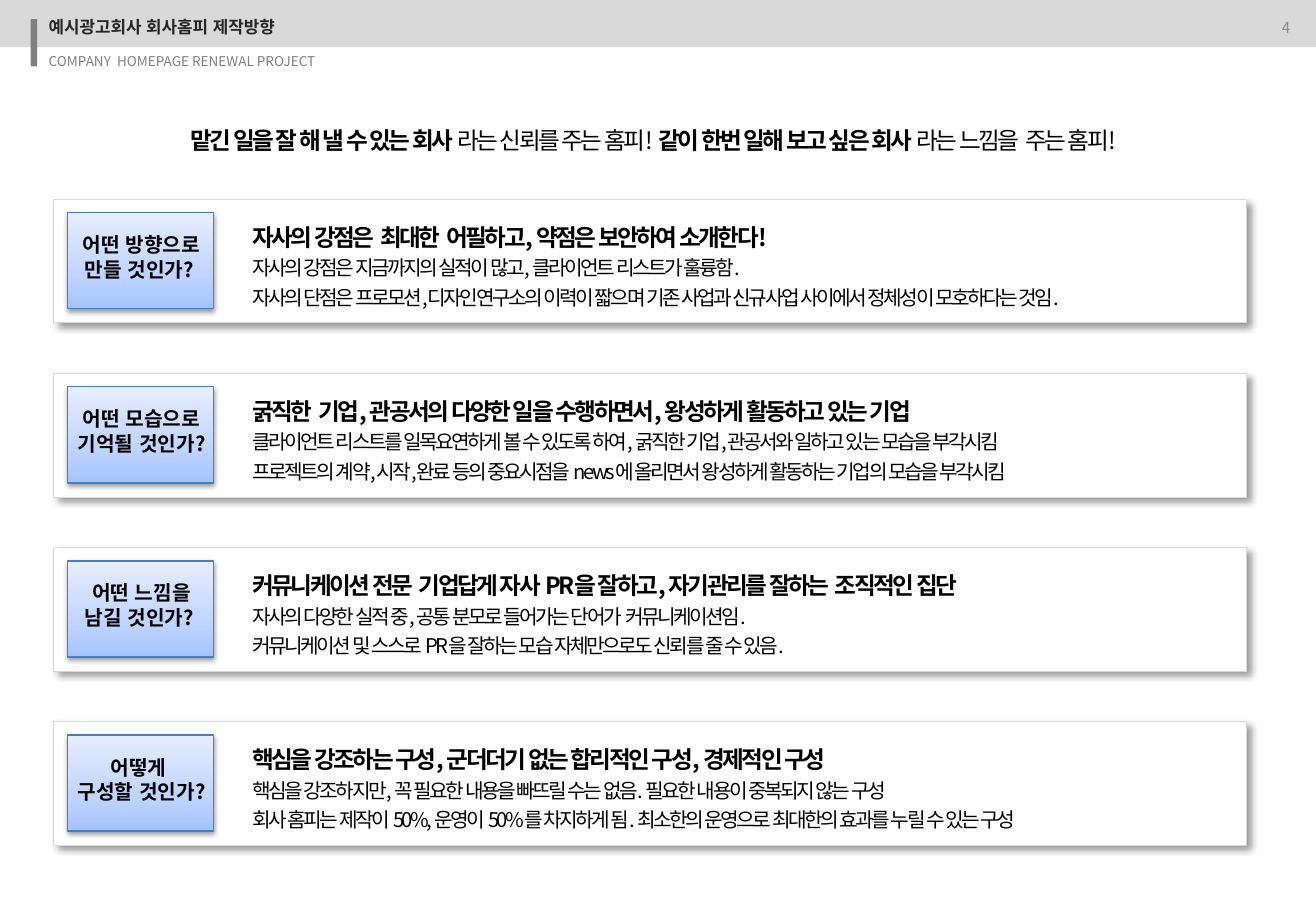
from dataclasses import dataclass

from pptx import Presentation
from pptx.dml.color import RGBColor
from pptx.enum.lang import MSO_LANGUAGE_ID
from pptx.enum.shapes import MSO_SHAPE
from pptx.enum.text import MSO_ANCHOR, MSO_AUTO_SIZE, PP_ALIGN
from pptx.oxml import parse_xml
from pptx.oxml.ns import nsdecls, qn
from pptx.util import Cm, Pt


@dataclass(frozen=True)
class Theme:
    """Colours, font and type sizes of the deck."""
    font: str = "Noto Sans CJK KR"
    band: str = "D9D9D9"
    marker: str = "808080"
    number: str = "8C8C8C"
    title: str = "262626"
    ink: str = "000000"
    paper: str = "FFFFFF"
    badge_line: str = "4B7EBC"
    badge_stops: tuple = ((0, "A4C4FF"), (35, "BFD4FF"), (100, "E6EEFF"))
    tiny: int = 8
    small: int = 9
    caption: int = 10
    normal: int = 12
    lead: int = 14


THEME = Theme()
FIRST_CARD_TOP = 4.16
CARD_PITCH = 3.64

CARDS = (
    (("어떤 방향으로", "만들 것인가? "),
     ("자사의 강점은  최대한  어필하고, 약점은 보안하여 소개한다!",
      "자사의 강점은 지금까지의 실적이 많고, 클라이언트 리스트가 훌륭함.",
      "자사의 단점은 프로모션,디자인연구소의 이력이 짧으며 기존 사업과 신규사업 사이에서 정체성이 모호하다는 것임.")),
    (("어떤 모습으로", "기억될 것인가? "),
     ("굵직한  기업, 관공서의 다양한 일을 수행하면서, 왕성하게 활동하고 있는 기업",
      "클라이언트 리스트를 일목요연하게 볼 수 있도록 하여, 굵직한 기업,관공서와 일하고 있는 모습을 부각시킴",
      "프로젝트의 계약,시작,완료 등의 중요시점을 news에 올리면서 왕성하게 활동하는 기업의 모습을 부각시킴")),
    (("어떤 느낌을", "남길 것인가? "),
     ("커뮤니케이션 전문  기업답게 자사 PR을 잘하고, 자기관리를 잘하는  조직적인 집단",
      "자사의 다양한 실적 중, 공통 분모로 들어가는 단어가  커뮤니케이션임.",
      "커뮤니케이션 및 스스로 PR을 잘하는 모습 자체만으로도 신뢰를 줄 수 있음.")),
    (("어떻게 ", "구성할 것인가?"),
     ("핵심을 강조하는 구성, 군더더기 없는 합리적인 구성, 경제적인 구성",
      "핵심을 강조하지만, 꼭 필요한 내용을 빠뜨릴 수는 없음. 필요한 내용이 중복되지 않는 구성",
      "회사 홈피는 제작이 50%, 운영이 50%를 차지하게 됨. 최소한의 운영으로 최대한의 효과를 누릴 수 있는 구성")),
)


def add_box(page, left, top, width, height, fill, line=None, line_width=0.25):
    """Add a flat rectangle, measured in centimetres."""
    box = page.shapes.add_shape(
        MSO_SHAPE.RECTANGLE, Cm(left), Cm(top), Cm(width), Cm(height))
    box.shadow.inherit = False
    box.fill.solid()
    box.fill.fore_color.rgb = RGBColor.from_string(fill)
    if line:
        box.line.color.rgb = RGBColor.from_string(line)
        box.line.width = Pt(line_width)
    else:
        box.line.fill.background()
    return box


def add_shadow(box, alpha, blur, distance, angle):
    """Give a box a soft outer shadow."""
    box._element.spPr.find(qn("a:effectLst")).append(parse_xml(
        f'<a:outerShdw {nsdecls("a")} blurRad="{Pt(blur)}" dist="{Pt(distance)}" '
        f'dir="{angle * 60000}" rotWithShape="0"><a:srgbClr val="{THEME.ink}">'
        f'<a:alpha val="{alpha * 1000}"/></a:srgbClr></a:outerShdw>'))


def add_gradient(box, stops):
    """Replace the solid fill of a box with a gradient that rises upwards."""
    marks = "".join(
        f'<a:gs pos="{place * 1000}"><a:srgbClr val="{colour}"/></a:gs>'
        for place, colour in stops)
    properties = box._element.spPr
    properties.replace(properties.find(qn("a:solidFill")), parse_xml(
        f'<a:gradFill {nsdecls("a")} rotWithShape="1"><a:gsLst>{marks}</a:gsLst>'
        '<a:lin ang="16200000" scaled="0"/></a:gradFill>'))


def add_span(para, text, size, bold, colour, tracking):
    """Add a run of Korean text to a paragraph."""
    span = para.add_run()
    span.text = text
    font = span.font
    font.name = THEME.font
    font.size = Pt(size)
    font.bold = bold
    font.color.rgb = RGBColor.from_string(colour)
    font.language_id = MSO_LANGUAGE_ID.KOREAN
    properties = span._r.get_or_add_rPr()
    if tracking:
        properties.set("spc", str(int(tracking * 100)))
    properties.find(qn("a:latin")).addnext(
        parse_xml(f'<a:ea {nsdecls("a")} typeface="{THEME.font}"/>'))


def add_text(page, left, top, width, height, paras, colour=THEME.ink, align=PP_ALIGN.LEFT,
             anchor=MSO_ANCHOR.TOP, spacing=None, tracking=0, bare=False, grow=False):
    """Add a text box whose paragraphs are lists of (text, size, bold) spans."""
    box = page.shapes.add_textbox(Cm(left), Cm(top), Cm(width), Cm(height))
    frame = box.text_frame
    frame.word_wrap = not bare
    frame.vertical_anchor = anchor
    if grow:
        frame.auto_size = MSO_AUTO_SIZE.SHAPE_TO_FIT_TEXT
    if bare:
        frame.margin_left = frame.margin_top = frame.margin_right = frame.margin_bottom = 0
    for index, spans in enumerate(paras):
        para = frame.add_paragraph() if index else frame.paragraphs[0]
        para.alignment = align
        if spacing:
            para.line_spacing = spacing
        for text, size, bold in spans:
            add_span(para, text, size, bold, colour, tracking)


def add_header(page):
    """Add the grey band with its marker, titles and page number."""
    add_box(page, 0, 0, 27.52, 0.99, THEME.band)
    add_text(page, 20.8, 0.07, 6.43, 1.01, [[("4", THEME.small, False)]],
             colour=THEME.number, align=PP_ALIGN.RIGHT, anchor=MSO_ANCHOR.MIDDLE)
    add_box(page, 0.64, 0.4, 0.14, 0.99, THEME.marker)
    add_text(page, 1.02, 1.12, 7.19, 0.48,
             [[("COMPANY  HOMEPAGE RENEWAL PROJECT", THEME.tiny, False)]],
             colour=THEME.marker, bare=True)
    add_text(page, 1.02, 0.35, 7.57, 0.63,
             [[("예시광고회사 회사홈피 제작방향", THEME.caption, True)]],
             colour=THEME.title, bare=True)


def add_card(page, top, question, answer):
    """Add one card with a question badge and its answer."""
    card = add_box(page, 1.12, top, 24.94, 2.59, THEME.paper, THEME.band)
    add_shadow(card, alpha=40, blur=4, distance=3, angle=45)
    badge = add_box(page, 1.42, top + 0.29, 3.05, 2.01, THEME.paper, THEME.badge_line, 0.75)
    add_gradient(badge, THEME.badge_stops)
    add_shadow(badge, alpha=38, blur=3.1, distance=1.6, angle=90)
    add_text(page, 1.37, top + 0.58, 3.18, 1.28,
             [[(line, THEME.normal, True)] for line in question],
             align=PP_ALIGN.CENTER, grow=True)
    headline, *details = answer
    add_text(page, 5.03, top + 0.25, 20.65, 2.21,
             [[(headline, THEME.lead, True)]]
             + [[(detail, THEME.normal, False)] for detail in details],
             spacing=1.2, tracking=-1.5, grow=True)


def add_slogan(page):
    """Add the centred slogan above the cards."""
    add_text(page, 1.07, 2.39, 25.2, 0.97, [[
        ("맡긴 일을 잘 해 낼 수 있는 회사 ", THEME.lead, True),
        ("라는 신뢰를 주는 홈피!  ", THEME.lead, False),
        ("같이 한번 일해 보고 싶은 회사 ", THEME.lead, True),
        ("라는 느낌을  주는 홈피!", THEME.lead, False),
    ]], align=PP_ALIGN.CENTER, spacing=1.2, tracking=-1.5, grow=True)


def main():
    """Build the slide and save the deck."""
    deck = Presentation()
    deck.slide_width, deck.slide_height = Cm(27.52), Cm(19.05)
    page = deck.slides.add_slide(deck.slide_layouts[6])
    add_header(page)
    for index, (question, answer) in enumerate(CARDS):
        add_card(page, FIRST_CARD_TOP + index * CARD_PITCH, question, answer)
    add_slogan(page)
    deck.save("out.pptx")


if __name__ == "__main__":
    main()
